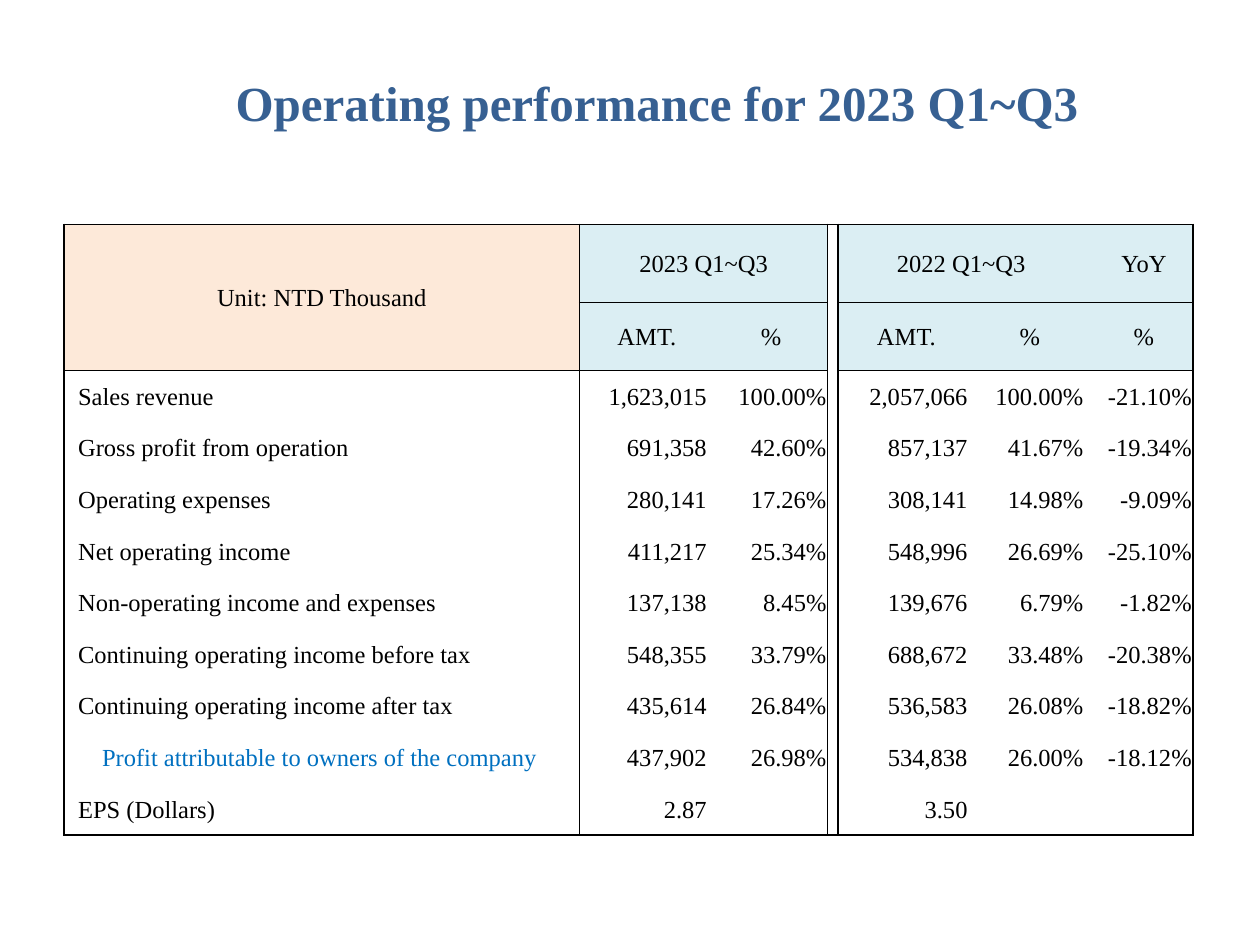
from lxml import etree
from pptx import Presentation
from pptx.dml.color import RGBColor
from pptx.enum.text import MSO_ANCHOR, MSO_AUTO_SIZE, PP_ALIGN
from pptx.oxml.ns import qn
from pptx.util import Inches, Pt

LEFT, CENTER, RIGHT = PP_ALIGN.LEFT, PP_ALIGN.CENTER, PP_ALIGN.RIGHT
MIDDLE = MSO_ANCHOR.MIDDLE
NO_AUTOFIT = MSO_AUTO_SIZE.NONE
TITLE_ONLY = 5

BLACK, NAVY, BLUE = "000000", "376092", "0070C0"
PEACH, PALE_BLUE = "FDE9D9", "DBEEF3"

COLUMN_WIDTHS = [4.09, 1.07, 0.9, 0.08, 1.09, 0.87, 0.08, 0.78]
ROW_HEIGHTS = [0.62, 0.54] + [0.41] * 9
VALUE_COLUMNS = [1, 2, 4, 5, 7]
AMOUNT_COLUMNS = [1, 4]
SPACER_COLUMN = 3
HEADER_ROWS = 2
MERGES = [(0, 0, 1, 0), (0, 1, 0, 2), (0, 4, 0, 5)]
OUTLINES = [
    (top, left, bottom, right)
    for left, right in [(1, 2), (4, 7)]
    for top, bottom in [(0, 0), (1, 1), (2, 10)]
] + [(0, 0, 1, 0), (2, 0, 10, 0), (0, SPACER_COLUMN, 10, SPACER_COLUMN)]

HEADERS = {
    (0, 0): "Unit: NTD Thousand",
    (0, 1): "2023 Q1~Q3",
    (0, 4): "2022 Q1~Q3",
    (0, 7): "YoY",
    (1, 1): "AMT.",
    (1, 2): "%",
    (1, 4): "AMT.",
    (1, 5): "%",
    (1, 7): "%",
}
OWNERS_LABEL = "Profit attributable to owners of the company"
RESULTS = [
    ("Sales revenue", "1,623,015", "100.00%", "2,057,066", "100.00%", "-21.10%"),
    ("Gross profit from operation", "691,358", "42.60%", "857,137", "41.67%", "-19.34%"),
    ("Operating expenses", "280,141", "17.26%", "308,141", "14.98%", "-9.09%"),
    ("Net operating income", "411,217", "25.34%", "548,996", "26.69%", "-25.10%"),
    ("Non-operating income and expenses", "137,138", "8.45%", "139,676", "6.79%", "-1.82%"),
    ("Continuing operating income before tax", "548,355", "33.79%", "688,672", "33.48%", "-20.38%"),
    ("Continuing operating income after tax", "435,614", "26.84%", "536,583", "26.08%", "-18.82%"),
    (OWNERS_LABEL, "437,902", "26.98%", "534,838", "26.00%", "-18.12%"),
    ("EPS (Dollars)", "2.87", "", "3.50", "", ""),
]


def rgb(color):
    return RGBColor.from_string(color)


def set_attributes(target, values):
    for name, value in values.items():
        setattr(target, name, value)


def write_text(paragraph, text, size, color, alignment, bold=False):
    paragraph.alignment = alignment
    run = paragraph.add_run()
    run.text = text
    set_attributes(run.font, {"name": "Times New Roman", "size": Pt(size), "bold": bold})
    run.font.color.rgb = rgb(color)


def add_title(slide):
    title = slide.shapes.title
    set_attributes(title, {
        "left": Inches(1.77), "top": Inches(0.52),
        "width": Inches(6.96), "height": Inches(0.57),
    })
    set_attributes(title.text_frame, {
        "word_wrap": False, "auto_size": NO_AUTOFIT, "vertical_anchor": MIDDLE,
    })
    write_text(title.text_frame.paragraphs[0], "Operating performance for 2023 Q1~Q3",
               28, NAVY, LEFT, bold=True)


def outlined_sides(cell, row, column):
    last_row = row + cell.span_height - 1
    last_column = column + cell.span_width - 1
    sides = set()
    for top, left, bottom, right in OUTLINES:
        if top <= row <= bottom and left <= column <= right:
            edges = {"L": column == left, "R": last_column == right,
                     "T": row == top, "B": last_row == bottom}
            sides.update(side for side, on_edge in edges.items() if on_edge)
    return sides


def set_borders(cell, sides):
    properties = cell._tc.get_or_add_tcPr()
    for side in "LRTB":
        line = etree.SubElement(properties, qn(f"a:ln{side}"), w=str(Pt(1)))
        if side in sides:
            fill = etree.SubElement(line, qn("a:solidFill"))
            etree.SubElement(fill, qn("a:srgbClr"), val=BLACK)
        else:
            etree.SubElement(line, qn("a:noFill"))


def set_fill(cell, row, column):
    if row < HEADER_ROWS and column != SPACER_COLUMN:
        cell.fill.solid()
        cell.fill.fore_color.rgb = rgb(PALE_BLUE if column else PEACH)
    else:
        cell.fill.background()


def write_cell(cell, text, alignment, color=BLACK):
    write_text(cell.text_frame.paragraphs[0], text, 14, color, alignment)


def fill_results(table):
    for row, (label, *values) in enumerate(RESULTS, HEADER_ROWS):
        is_owners = label == OWNERS_LABEL
        label_cell = table.cell(row, 0)
        label_cell.margin_left = Inches(0.3 if is_owners else 0.11)
        write_cell(label_cell, label, LEFT, BLUE if is_owners else BLACK)
        for column, value in zip(VALUE_COLUMNS, values):
            if value:
                cell = table.cell(row, column)
                if column in AMOUNT_COLUMNS:
                    cell.margin_right = Inches(0.06)
                write_cell(cell, value, RIGHT)


def add_results_table(slide):
    table = slide.shapes.add_table(
        len(ROW_HEIGHTS), len(COLUMN_WIDTHS),
        Inches(0.51), Inches(1.78), Inches(8.96), Inches(4.88),
    ).table
    set_attributes(table, {"first_row": False, "horz_banding": False})
    for column, width in zip(table.columns, COLUMN_WIDTHS):
        column.width = Inches(width)
    for row, height in zip(table.rows, ROW_HEIGHTS):
        row.height = Inches(height)
    for top, left, bottom, right in MERGES:
        table.cell(top, left).merge(table.cell(bottom, right))
    for row in range(len(ROW_HEIGHTS)):
        for column in range(len(COLUMN_WIDTHS)):
            cell = table.cell(row, column)
            set_attributes(cell, {
                "margin_left": Inches(0.01), "margin_top": Inches(0.01),
                "margin_right": Inches(0.01), "margin_bottom": 0,
                "vertical_anchor": MIDDLE,
            })
            set_borders(cell, outlined_sides(cell, row, column))
            set_fill(cell, row, column)
    for position, text in HEADERS.items():
        write_cell(table.cell(*position), text, CENTER)
    fill_results(table)


def main():
    presentation = Presentation()
    presentation.slide_width = Inches(10)
    presentation.slide_height = Inches(7.5)
    slide = presentation.slides.add_slide(presentation.slide_layouts[TITLE_ONLY])
    add_title(slide)
    add_results_table(slide)
    presentation.save("out.pptx")


if __name__ == "__main__":
    main()
